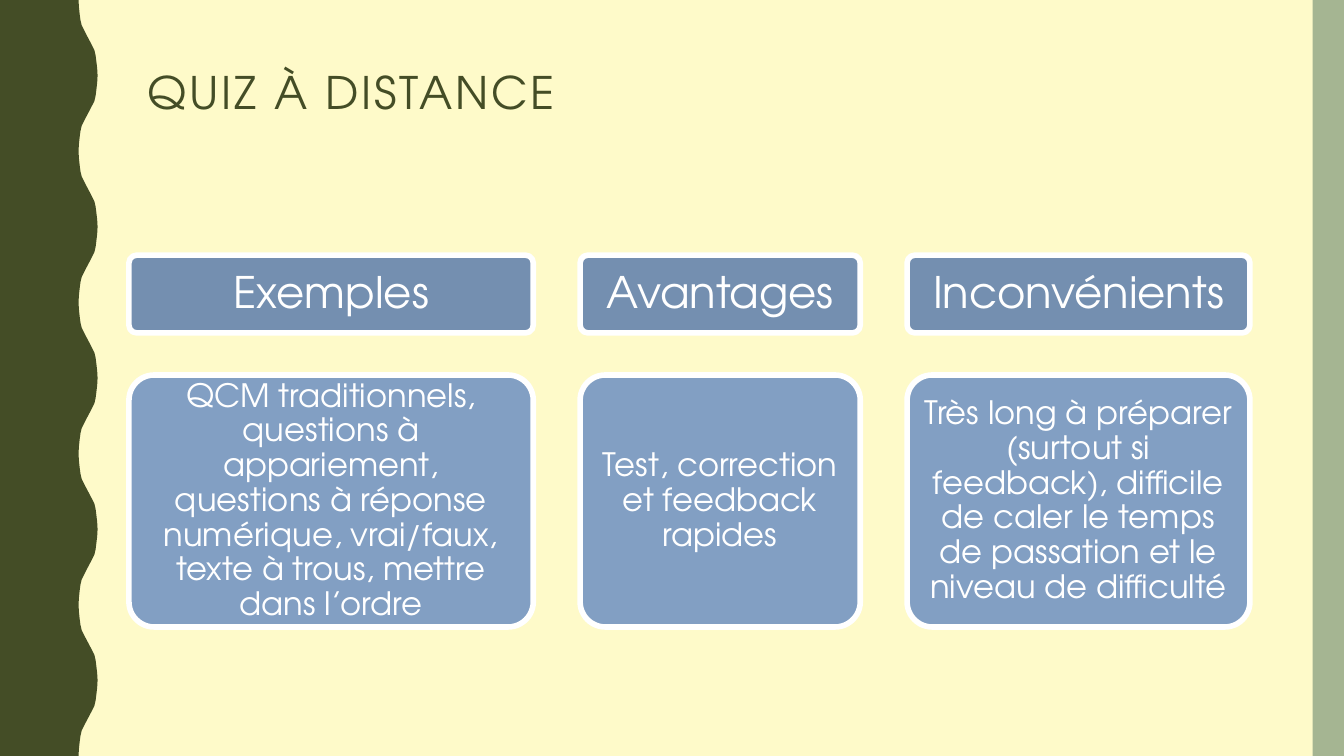
from dataclasses import dataclass

from pptx import Presentation
from pptx.dml.color import RGBColor
from pptx.enum.shapes import MSO_SHAPE
from pptx.enum.text import MSO_ANCHOR, PP_ALIGN
from pptx.util import Cm, Pt

RECT = MSO_SHAPE.RECTANGLE
ROUND = MSO_SHAPE.ROUNDED_RECTANGLE
MIDDLE = MSO_ANCHOR.MIDDLE
LEFT = PP_ALIGN.LEFT
CENTER = PP_ALIGN.CENTER


@dataclass(frozen=True)
class Theme:
    font: str = "TeX Gyre Adventor"
    paper: str = "FEFAC9"
    dark: str = "444D26"
    sage: str = "A5B592"
    head: str = "748FB0"
    body: str = "829FC3"
    white: str = "FFFFFF"
    title_size: int = 32
    head_size: int = 31
    body_size: int = 23
    border: int = 4


THEME = Theme()
WIDTH, HEIGHT = 33.87, 19.05
WAVES = 5
CURVE = [(0, 0), (0.01, 0.18), (0.03, 0.36), (0.05, 0.51),
         (0.08, 0.64), (0.13, 0.74), (0.18, 0.84)]
COLUMNS = [
    (10.19, "Exemples",
     "QCM traditionnels, questions à appariement, questions à réponse "
     "numérique, vrai/faux, texte à trous, mettre dans l’ordre"),
    (7.06, "Avantages", "Test, correction et feedback rapides"),
    (8.64, "Inconvénients",
     "Très long à préparer (surtout si feedback), difficile de caler "
     "le temps de passation et le niveau de difficulté"),
]


def color(code):
    return RGBColor.from_string(code)


def paint(shape, code):
    shape.shadow.inherit = False
    shape.fill.solid()
    shape.fill.fore_color.rgb = color(code)
    shape.line.fill.background()


def write(shape, text, size, code, align, inset):
    frame = shape.text_frame
    frame.word_wrap = True
    frame.vertical_anchor = MIDDLE
    frame.margin_left = frame.margin_right = Cm(inset)
    frame.margin_top = frame.margin_bottom = Cm(inset)
    frame.text = text
    para = frame.paragraphs[0]
    para.alignment = align
    para.line_spacing = 0.9
    run = para.runs[0]
    run.font.name = THEME.font
    run.font.size = Pt(size)
    run.font.color.rgb = color(code)
    return run


def add_wave(slide, left, top, width, height):
    depth = 0.48
    edge = left + width - depth
    step = height / WAVES
    half = step / 2
    rise = CURVE + [(depth - x, half - y) for x, y in reversed(CURVE)]
    cycle = rise + [(x, step - y) for x, y in reversed(rise)]
    points = [(edge + x, top + i * step + y)
              for i in range(WAVES) for x, y in cycle]
    points.append((left, top + height))
    build = slide.shapes.build_freeform(Cm(left), Cm(top))
    build.add_line_segments([(Cm(x), Cm(y)) for x, y in points])
    paint(build.convert_to_shape(), THEME.dark)


def add_stripe(slide, left, top, width, height):
    stripe = slide.shapes.add_shape(
        RECT, Cm(left), Cm(top), Cm(width), Cm(height))
    paint(stripe, THEME.sage)


def add_title(slide, left, top, width, height):
    box = slide.shapes.add_textbox(
        Cm(left), Cm(top), Cm(width), Cm(height))
    run = write(box, "QUIZ À DISTANCE", THEME.title_size, THEME.dark,
                LEFT, 0.25)
    run.font._element.set("spc", "200")


def add_card(slide, left, top, width, height, text, size, code, inset):
    card = slide.shapes.add_shape(
        ROUND, Cm(left), Cm(top), Cm(width), Cm(height))
    card.adjustments[0] = 0.1
    paint(card, code)
    card.line.color.rgb = color(THEME.white)
    card.line.width = Pt(THEME.border)
    write(card, text, size, THEME.white, CENTER, inset)


def add_columns(slide, left, top, width, height):
    head, gap = 1.96, 1.06
    drop = head + gap
    space = (width - sum(col[0] for col in COLUMNS)) / (len(COLUMNS) - 1)
    for wide, label, text in COLUMNS:
        add_card(slide, left, top, wide, head, label,
                 THEME.head_size, THEME.head, 0.33)
        add_card(slide, left, top + drop, wide, height - drop, text,
                 THEME.body_size, THEME.body, 0.25)
        left += wide + space


def main():
    deck = Presentation()
    deck.slide_width, deck.slide_height = Cm(WIDTH), Cm(HEIGHT)
    slide = deck.slides.add_slide(deck.slide_layouts[6])
    back = slide.background.fill
    back.solid()
    back.fore_color.rgb = color(THEME.paper)
    add_wave(slide, 0, 0, 2.46, HEIGHT)
    add_stripe(slide, WIDTH - 0.79, 0, 0.79, HEIGHT)
    add_title(slide, 3.48, 1.07, 28.27, 2.67)
    add_columns(slide, 3.25, 6.43, 28.25, 9.37)
    deck.save("out.pptx")


if __name__ == "__main__":
    main()
